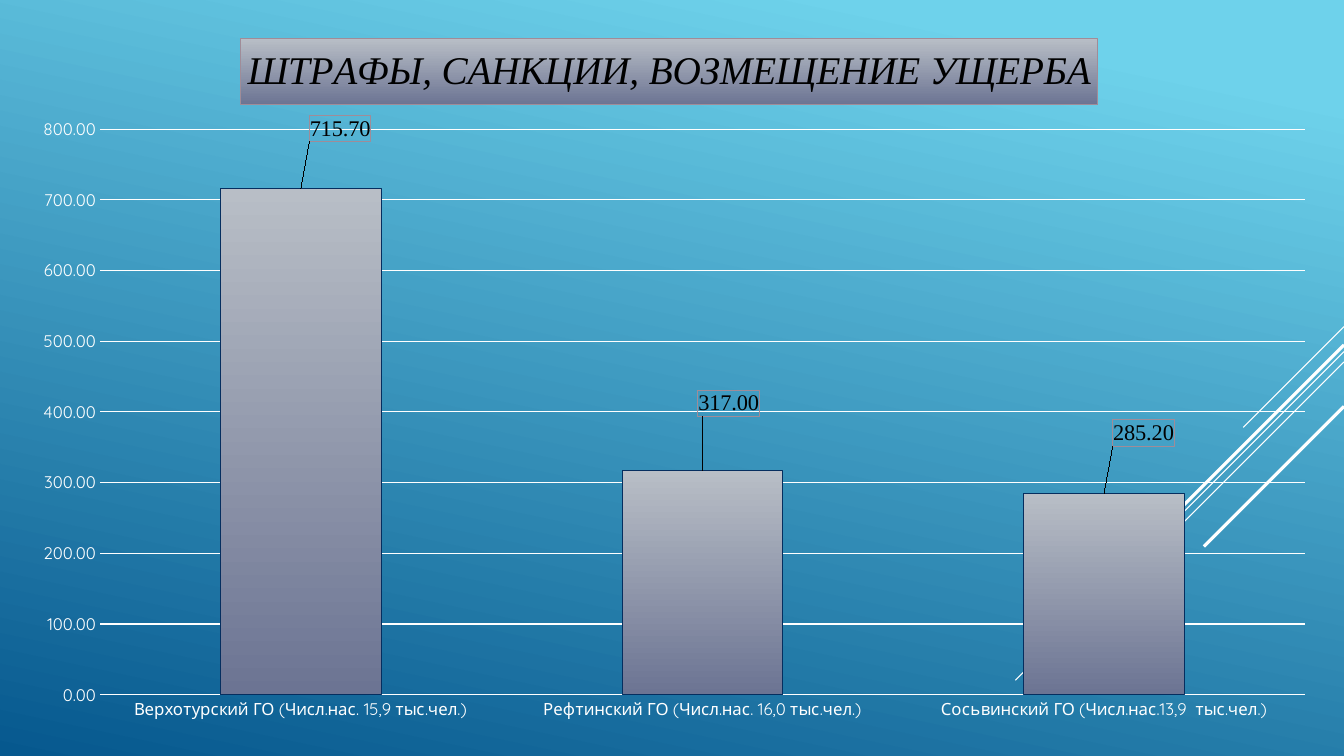
from lxml.etree import SubElement
from pptx import Presentation
from pptx.chart.data import CategoryChartData
from pptx.dml.color import RGBColor
from pptx.enum.chart import XL_CHART_TYPE, XL_LABEL_POSITION, XL_TICK_MARK
from pptx.enum.shapes import MSO_CONNECTOR
from pptx.oxml import parse_xml
from pptx.oxml.ns import nsdecls, qn
from pptx.util import Cm, Pt

WHITE = RGBColor(0xFF, 0xFF, 0xFF)
BLACK = RGBColor(0x00, 0x00, 0x00)
SKY = RGBColor(0x6E, 0xD2, 0xEB)
DEEP_BLUE = RGBColor(0x06, 0x58, 0x8E)
SILVER = RGBColor(0xB8, 0xBE, 0xC6)
SLATE = RGBColor(0x6C, 0x74, 0x93)
NAVY = RGBColor(0x05, 0x2E, 0x5F)
FRAME = RGBColor(0xA0, 0x8C, 0x98)

BODY_FONT = "Quicksand"
TITLE_FONT = "Times New Roman"
NUMBER_FORMAT = "#,##0.00"
TITLE = "ШТРАФЫ, САНКЦИИ, ВОЗМЕЩЕНИЕ УЩЕРБА"
FINES = {
    "Верхотурский ГО (Числ.нас. 15,9 тыс.чел.)": 715.7,
    "Рефтинский ГО (Числ.нас. 16,0 тыс.чел.)": 317,
    "Сосьвинский ГО (Числ.нас.13,9  тыс.чел.)": 285.2,
}
LABEL_OFFSETS = [(0.03, -0.06), (0.02, -0.07), (0.03, -0.06)]
DIAGONALS = [
    (8.23, 2.54, 0.75),
    (8.86, 8.28, 0.75),
    (9.12, 5.26, 0.75),
    (8.69, 4.85, 2.25),
    (10.24, 3.53, 2.25),
]


def set_gradient(fill, angle, *stops):
    """Fill with a linear gradient of (position, colour) stops."""
    fill.gradient()
    fill.gradient_angle = angle
    for stop, (position, color) in zip(fill.gradient_stops, stops):
        stop.position = position
        stop.color.rgb = color


def set_font(font, name, size, color):
    """Give a font its name, size and colour."""
    font.name = name
    font.size = Pt(size)
    font.color.rgb = color


def set_line(line, color, width):
    """Give a line its colour and width in points."""
    line.color.rgb = color
    line.width = Pt(width)


def set_layout(element, index, **settings):
    """Place a chart part by fractions of the chart area."""
    for old_layout in element.findall(qn("c:layout")):
        element.remove(old_layout)
    layout = parse_xml(f"<c:layout {nsdecls('c')}/>")
    manual = SubElement(layout, qn("c:manualLayout"))
    for name, value in settings.items():
        SubElement(manual, qn(f"c:{name}")).set("val", str(value))
    element.insert(index, layout)


def add_diagonals(slide, right):
    """Draw the diagonal strokes that run down from the right edge."""
    for top, length, width in DIAGONALS:
        connector = slide.shapes.add_connector(
            MSO_CONNECTOR.STRAIGHT,
            Cm(right), Cm(top), Cm(right - length), Cm(top + length),
        )
        set_line(connector.line, WHITE, width)
        SubElement(connector.element.spPr, qn("a:effectLst"))


def style_title(chart):
    """Write the framed chart title."""
    title = chart.chart_title
    run = title.text_frame.paragraphs[0].add_run()
    run.text = TITLE
    set_font(run.font, TITLE_FONT, 28, BLACK)
    run.font.bold = False
    run.font.italic = True
    set_gradient(title.format.fill, 270, (0, SILVER), (1, SLATE))
    set_line(title.format.line, FRAME, 0.75)
    set_layout(chart.element.xpath("c:chart/c:title")[0], 1,
               xMode="edge", yMode="edge", x=0.17, y=0.028)


def style_axes(chart):
    """Style both axes and the gridlines."""
    for axis in (chart.category_axis, chart.value_axis):
        axis.major_tick_mark = XL_TICK_MARK.NONE
        axis.minor_tick_mark = XL_TICK_MARK.NONE
        axis.format.line.fill.background()
        set_font(axis.tick_labels.font, BODY_FONT, 12, WHITE)
    value_axis = chart.value_axis
    value_axis.minimum_scale = 0
    value_axis.maximum_scale = 800
    value_axis.major_unit = 100
    value_axis.tick_labels.number_format = NUMBER_FORMAT
    value_axis.tick_labels.number_format_is_linked = False
    set_line(value_axis.major_gridlines.format.line, WHITE, 0.75)


def style_labels(chart, series):
    """Frame the value labels and shift each one from its column."""
    labels = series.data_labels
    labels.show_value = True
    labels.number_format = NUMBER_FORMAT
    labels.number_format_is_linked = False
    labels.position = XL_LABEL_POSITION.OUTSIDE_END
    set_font(labels.font, TITLE_FONT, 16, BLACK)
    for index in range(len(LABEL_OFFSETS)):
        label = series.points[index].data_label
        set_font(label.font, TITLE_FONT, 16, BLACK)
        label.position = XL_LABEL_POSITION.OUTSIDE_END
    for element, (x, y) in zip(chart.element.xpath(".//c:dLbl"), LABEL_OFFSETS):
        for old_frame in element.findall(qn("c:spPr")):
            element.remove(old_frame)
        set_layout(element, 1, x=x, y=y)
        element.insert(2, parse_xml(
            f'<c:numFmt {nsdecls("c")} formatCode="{NUMBER_FORMAT}" sourceLinked="0"/>'))
        element.insert(3, parse_xml(
            f'<c:spPr {nsdecls("c", "a")}><a:noFill/><a:ln w="9525"><a:solidFill>'
            f'<a:srgbClr val="{FRAME}"/></a:solidFill></a:ln></c:spPr>'))


def add_fines_chart(slide, left, top, width, height):
    """Add the column chart of fines in the given box."""
    data = CategoryChartData(number_format=NUMBER_FORMAT)
    data.categories = list(FINES)
    data.add_series(TITLE, list(FINES.values()))
    chart = slide.shapes.add_chart(
        XL_CHART_TYPE.COLUMN_CLUSTERED,
        Cm(left), Cm(top), Cm(width), Cm(height), data,
    ).chart
    set_font(chart.font, BODY_FONT, 10, WHITE)
    chart.has_legend = False
    style_title(chart)
    style_axes(chart)
    plot = chart.plots[0]
    plot.gap_width = 150
    plot.vary_by_categories = False
    series = plot.series[0]
    set_gradient(series.format.fill, 270, (0, SILVER), (1, SLATE))
    set_line(series.format.line, NAVY, 0.75)
    style_labels(chart, series)
    set_layout(chart.element.xpath("c:chart/c:plotArea")[0], 0,
               layoutTarget="inner", xMode="edge", yMode="edge",
               x=0.063, y=0.155, w=0.917, h=0.789)


def main():
    """Build and save the slide."""
    presentation = Presentation()
    presentation.slide_width = Cm(33.87)
    presentation.slide_height = Cm(19.05)
    slide = presentation.slides.add_slide(presentation.slide_layouts[6])
    set_gradient(slide.background.fill, 258, (0.1, SKY), (1, DEEP_BLUE))
    add_diagonals(slide, 33.87)
    add_fines_chart(slide, 0.43, 0.46, 33.12, 18.06)
    presentation.save("out.pptx")


if __name__ == "__main__":
    main()
